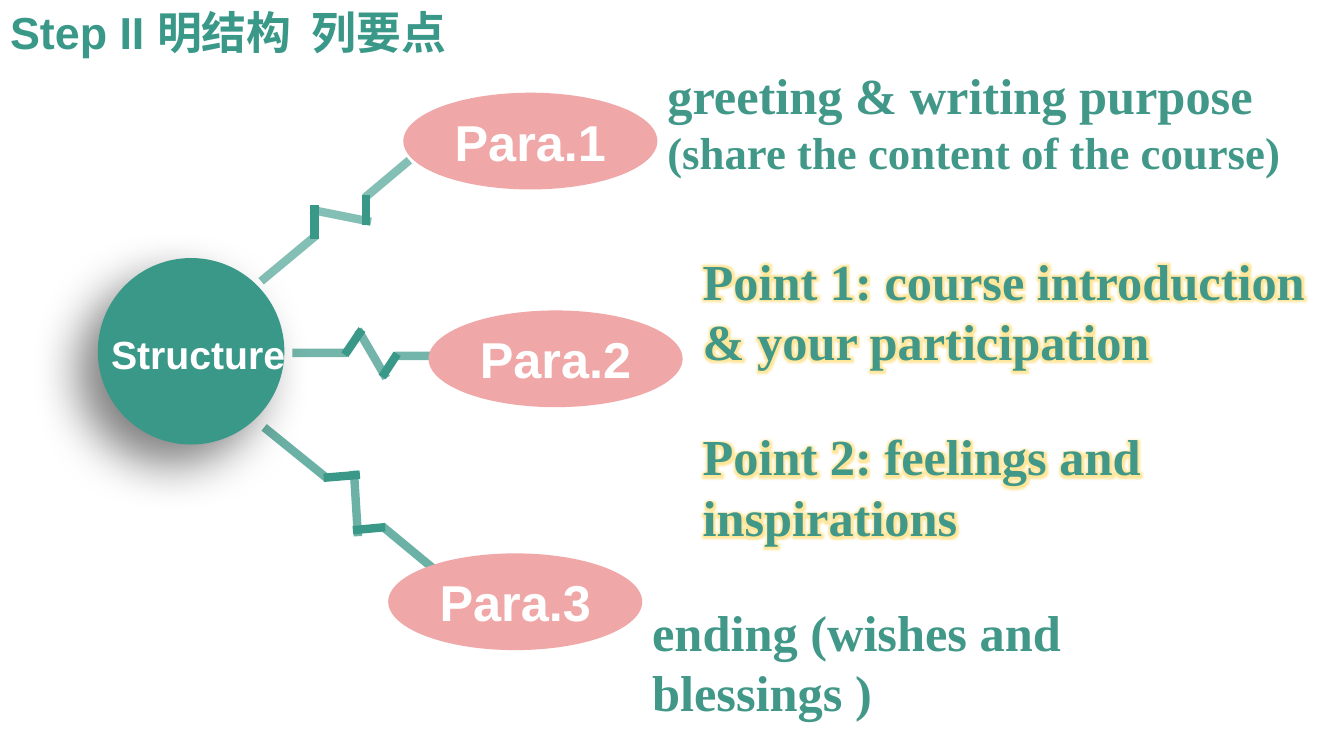
from dataclasses import dataclass

from lxml.etree import SubElement
from pptx import Presentation
from pptx.dml.color import RGBColor
from pptx.enum.shapes import MSO_CONNECTOR, MSO_SHAPE
from pptx.enum.text import MSO_ANCHOR, PP_ALIGN
from pptx.oxml.ns import qn
from pptx.util import Inches, Pt


@dataclass(frozen=True)
class Theme:
    green: str = "3A9888"
    note_green: str = "419888"
    pink: str = "F0A7A7"
    white: str = "FFFFFF"
    black: str = "000000"
    glow: str = "FFE699"
    sans: str = "Arial"
    serif: str = "Times New Roman"
    large: int = 36
    medium: int = 32
    small: int = 28
    stroke: int = 6


THEME = Theme()
NODE_SIZE = (2.52, 0.96)

# Each branch: origin, opacity of the pale segments, pale segments, solid
# segments (x1, y1, x2, y2 from the origin).
BRANCHES = [
    ((2.9, 3.27), 71,
     [(0, 0.23, 0.54, 0.23), (1.02, 0.26, 1.47, 0.26), (0.93, 0.48, 0.65, 0)],
     [(0.52, 0.25, 0.69, 0), (0.89, 0.47, 1.04, 0.24)]),
    ((2.59, 1.59), 61,
     [(0, 1.2, 0.54, 0.75), (1.03, 0.37, 1.47, 0), (1.09, 0.61, 0.49, 0.49)],
     [(0.53, 0.78, 0.53, 0.44), (1.04, 0.64, 1.04, 0.34)]),
    ((2.62, 4.24), 75,
     [(0, 0, 0.63, 0.51), (1.17, 0.98, 1.69, 1.41), (0.93, 1.08, 0.89, 0.43)],
     [(0.59, 0.5, 0.95, 0.47), (0.88, 1.02, 1.2, 0.99)]),
]
NODES = [("Para.1", 4, 0.92), ("Para.2", 4.25, 3.08), ("Para.3", 3.85, 5.49)]


def set_font(font, name, size, color):
    font.name, font.size, font.bold = name, Pt(size), True
    font.color.rgb = RGBColor.from_string(color)


def add_alpha(clr, opacity):
    SubElement(clr, qn("a:alpha"), val=str(opacity * 1000))


def add_title(slide, text, left, top, width, height):
    title = slide.shapes.title
    title.left, title.top = Inches(left), Inches(top)
    title.width, title.height = Inches(width), Inches(height)
    title.text_frame.vertical_anchor = MSO_ANCHOR.TOP
    p = title.text_frame.paragraphs[0]
    p.text = text
    p.alignment = PP_ALIGN.LEFT
    set_font(p.font, THEME.sans, THEME.medium, THEME.green)


def add_branch(slide, origin, opacity, pale, solid):
    """Draw one zigzag from the hub to a paragraph node."""
    left, top = origin
    group = slide.shapes.add_group_shape()
    for segments, alpha in ((pale, opacity), (solid, 100)):
        for x1, y1, x2, y2 in segments:
            line = group.shapes.add_connector(
                MSO_CONNECTOR.STRAIGHT, Inches(left + x1), Inches(top + y1),
                Inches(left + x2), Inches(top + y2))
            line.line.width = Pt(THEME.stroke)
            line.line.color.rgb = RGBColor.from_string(THEME.green)
            sp_pr = line._element.spPr
            if alpha < 100:
                add_alpha(sp_pr.find(".//" + qn("a:srgbClr")), alpha)
            SubElement(sp_pr, qn("a:effectLst"))


def add_ellipse(slide, left, top, width, height, color):
    sp = slide.shapes.add_shape(MSO_SHAPE.OVAL, Inches(left), Inches(top),
                                Inches(width), Inches(height))
    sp.shadow.inherit = False
    sp.fill.solid()
    sp.fill.fore_color.rgb = RGBColor.from_string(color)
    sp.line.fill.background()
    return sp


def add_hub(slide, left, top, size):
    circle = add_ellipse(slide, left, top, size, size, THEME.green)
    effects = circle._element.spPr.find(qn("a:effectLst"))
    shadow = SubElement(effects, qn("a:outerShdw"), blurRad=str(Pt(35)),
                        dist=str(Pt(20)), dir=str(135 * 60000),
                        algn="tr", rotWithShape="0")
    add_alpha(SubElement(shadow, qn("a:srgbClr"), val=THEME.black), 50)
    label = slide.shapes.add_textbox(Inches(left + 0.13), Inches(top + 0.72),
                                     Inches(1.73), Inches(0.47))
    tf = label.text_frame
    tf.word_wrap = False
    tf.margin_left = tf.margin_right = tf.margin_top = tf.margin_bottom = 0
    p = tf.paragraphs[0]
    p.text = "Structure"
    p.alignment = PP_ALIGN.CENTER
    set_font(p.font, THEME.sans, THEME.small, THEME.white)


def add_node(slide, text, left, top):
    sp = add_ellipse(slide, left, top, *NODE_SIZE, THEME.pink)
    tf = sp.text_frame
    tf.vertical_anchor = MSO_ANCHOR.MIDDLE
    p = tf.paragraphs[0]
    p.text = text
    p.alignment = PP_ALIGN.CENTER
    set_font(p.font, THEME.sans, THEME.large, THEME.white)


def add_glow(font):
    """Put a halo behind a run; effects go right after its fill."""
    r_pr = font._element
    effects = SubElement(r_pr, qn("a:effectLst"))
    halo = SubElement(effects, qn("a:glow"), rad=str(Pt(8)))
    SubElement(halo, qn("a:srgbClr"), val=THEME.glow)
    r_pr.find(qn("a:solidFill")).addnext(effects)


def add_note(slide, paragraphs, left, top, width, height, glow=False):
    """Write paragraphs, each a list of (text, size) runs."""
    box = slide.shapes.add_textbox(Inches(left), Inches(top),
                                   Inches(width), Inches(height))
    tf = box.text_frame
    tf.word_wrap = True
    for i, runs in enumerate(paragraphs):
        p = tf.add_paragraph() if i else tf.paragraphs[0]
        if i:
            p.space_before = Pt(39)
        for text, size in runs:
            r = p.add_run()
            r.text = text
            set_font(r.font, THEME.serif, size, THEME.note_green)
            if glow:
                add_glow(r.font)


def main():
    prs = Presentation()
    prs.slide_width, prs.slide_height = Inches(13.33), Inches(7.5)
    slide = prs.slides.add_slide(prs.slide_layouts[5])
    add_title(slide, "Step II 明结构  列要点", 0, 0, 9.95, 0.64)
    for branch in BRANCHES:
        add_branch(slide, *branch)
    add_hub(slide, 0.97, 2.56, 1.85)
    for node in NODES:
        add_node(slide, *node)
    add_note(slide, [[("greeting & writing purpose", THEME.large),
                      (" (share the content of the course)", THEME.medium)]],
             6.52, 0.59, 6.82, 1.24)
    add_note(slide, [[("Point 1: course introduction & your participation",
                       THEME.large)],
                     [("Point 2: feelings and inspirations", THEME.large)]],
             6.87, 2.43, 6.62, 3.06, glow=True)
    add_note(slide, [[("ending (wishes and blessings )", THEME.large)]],
             6.37, 5.91, 6.47, 0.71)
    prs.save("out.pptx")


if __name__ == "__main__":
    main()
